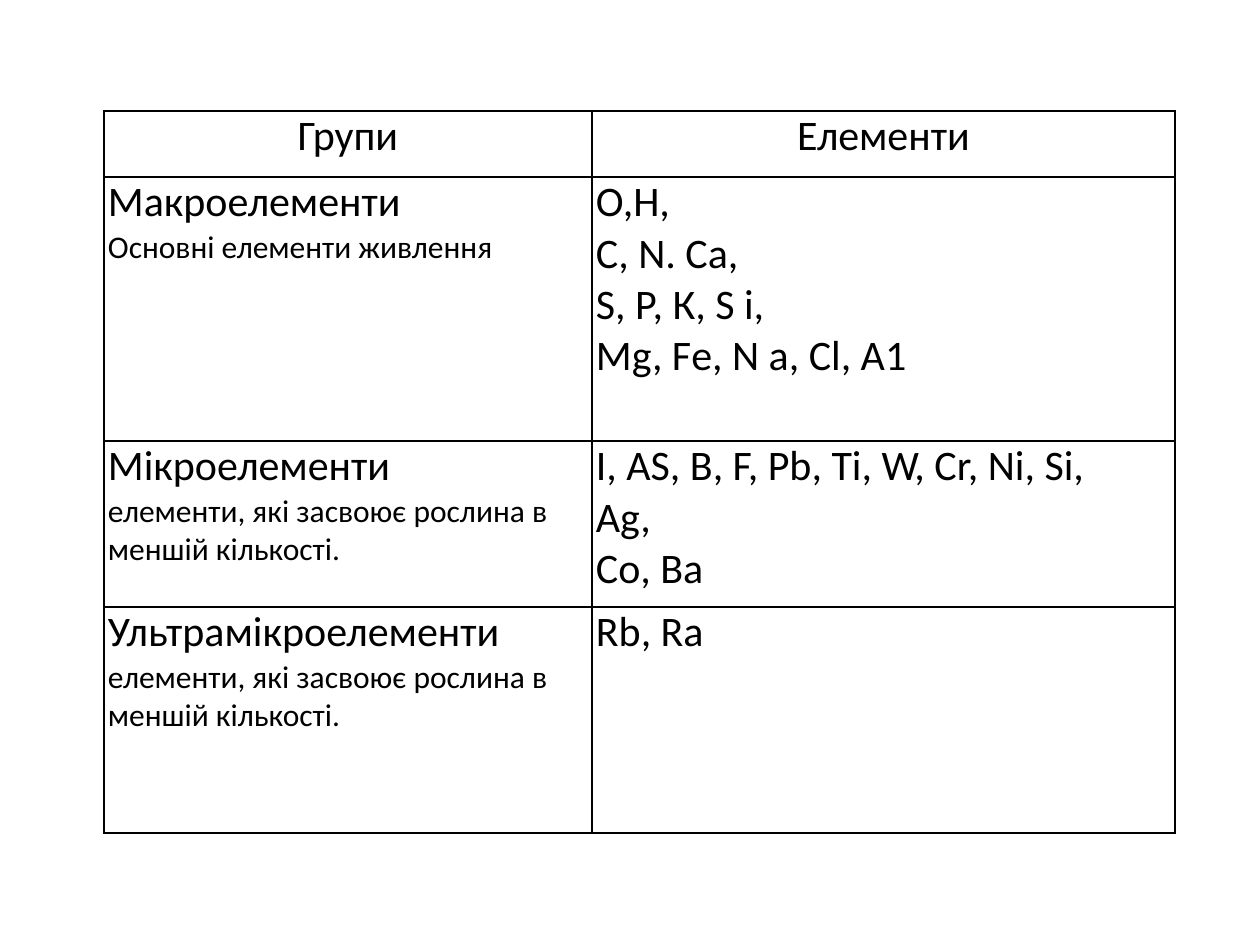
from dataclasses import dataclass

from lxml import etree
from pptx import Presentation
from pptx import util as u
from pptx.dml.color import RGBColor
from pptx.enum import text
from pptx.oxml.ns import qn

PX = 914400 // 126
INK = "000000"
PAPER = "FFFFFF"
BIG, SMALL = 24, 18
LEFT, TOP = 104, 111
COLS = [488, 583]
FORMAT = {"margin_left": 4 * PX, "margin_right": 4 * PX,
          "margin_top": 0, "margin_bottom": 0}
PLAIN = ("first_row", "horz_banding")


@dataclass
class Row:
    high: int
    group: str
    items: list[str]
    note: str = ""
    align: text.PP_ALIGN = text.PP_ALIGN.LEFT


ROWS = [
    Row(66, "Групи", ["Елементи"], align=text.PP_ALIGN.CENTER),
    Row(264, "Макроелементи",
        ["О,Н,", "С, N. Са,", "S, Р, К, S і,", "Мg, Fе, N а, Сl, А1"],
        "Основні елементи живлення"),
    Row(166, "Мікроелементи",
        ["І, АS, В, F, Рb, Ті, W, Сr, Nі, Sі,", "Аg,", "Со, Ва"],
        "елементи, які засвоює рослина в меншій кількості."),
    Row(226, "Ультрамікроелементи", ["Rb, Rа"],
        "елементи, які засвоює рослина в меншій кількості."),
]


def color(code: str) -> RGBColor:
    return RGBColor.from_string(code)


def border(cell) -> None:
    """Draw a one-point line on each side; lines must precede the fill."""
    props = cell._tc.get_or_add_tcPr()
    for spot, side in enumerate(("a:lnL", "a:lnR", "a:lnT", "a:lnB")):
        line = etree.Element(qn(side), w=str(u.Pt(1)))
        fill = etree.SubElement(line, qn("a:solidFill"))
        etree.SubElement(fill, qn("a:srgbClr"), val=INK)
        props.insert(spot, line)


def write(cell, lines: list[tuple[str, int]], align: text.PP_ALIGN) -> None:
    for name, value in FORMAT.items():
        setattr(cell, name, value)
    cell.fill.solid()
    cell.fill.fore_color.rgb = color(PAPER)
    border(cell)
    frame = cell.text_frame
    for spot, (words, size) in enumerate(lines):
        para = frame.add_paragraph() if spot else frame.paragraphs[0]
        para.alignment = align
        run = para.add_run()
        run.text = words
        run.font.name = "Calibri"
        run.font.size = u.Pt(size)
        run.font.color.rgb = color(INK)


def main() -> None:
    deck = Presentation()
    deck.slide_width, deck.slide_height = u.Inches(10), u.Inches(7.5)
    slide = deck.slides.add_slide(deck.slide_layouts[6])
    high = sum(row.high for row in ROWS)
    table = slide.shapes.add_table(
        len(ROWS), len(COLS), LEFT * PX, TOP * PX, sum(COLS) * PX, high * PX
    ).table
    for name in PLAIN:
        setattr(table, name, False)
    for col, wide in zip(table.columns, COLS):
        col.width = wide * PX
    for spot, row in enumerate(ROWS):
        table.rows[spot].height = row.high * PX
        group = [(row.group, BIG)]
        if row.note:
            group.append((row.note, SMALL))
        write(table.cell(spot, 0), group, row.align)
        write(table.cell(spot, 1), [(item, BIG) for item in row.items], row.align)
    deck.save("out.pptx")


if __name__ == "__main__":
    main()
